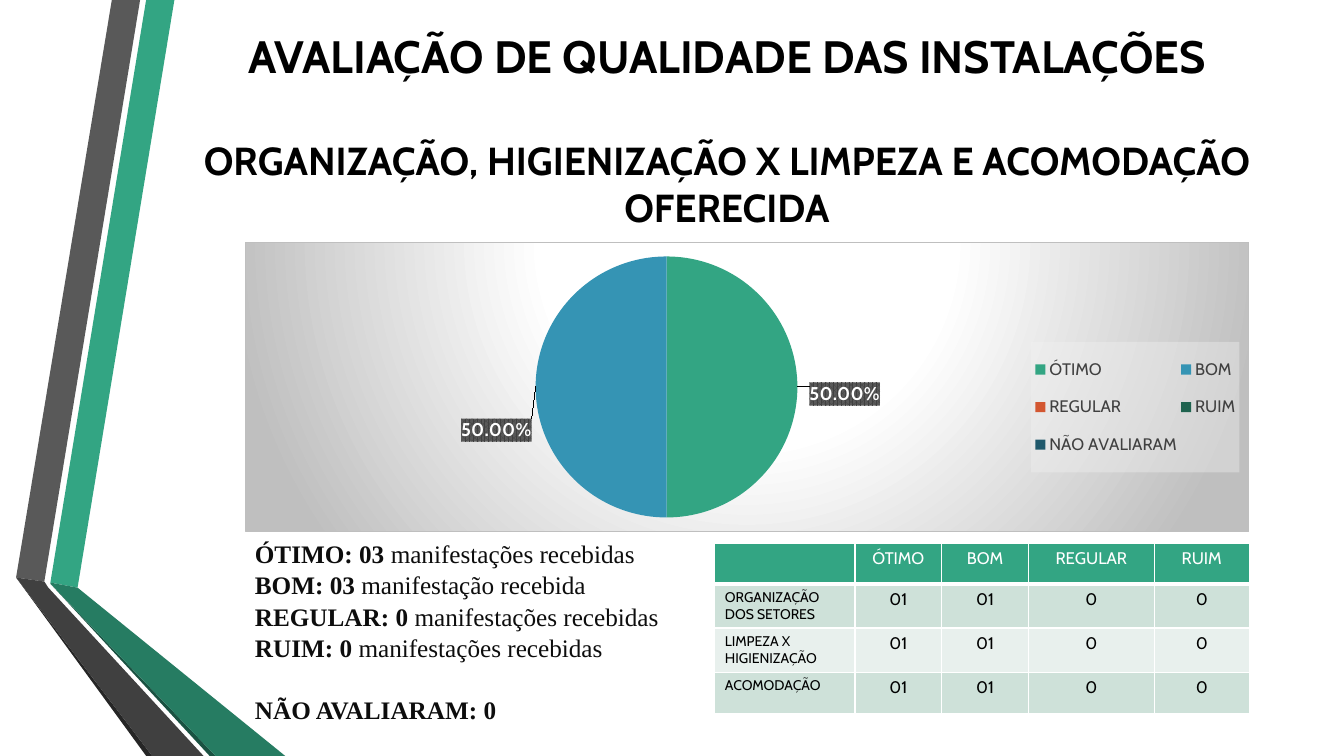
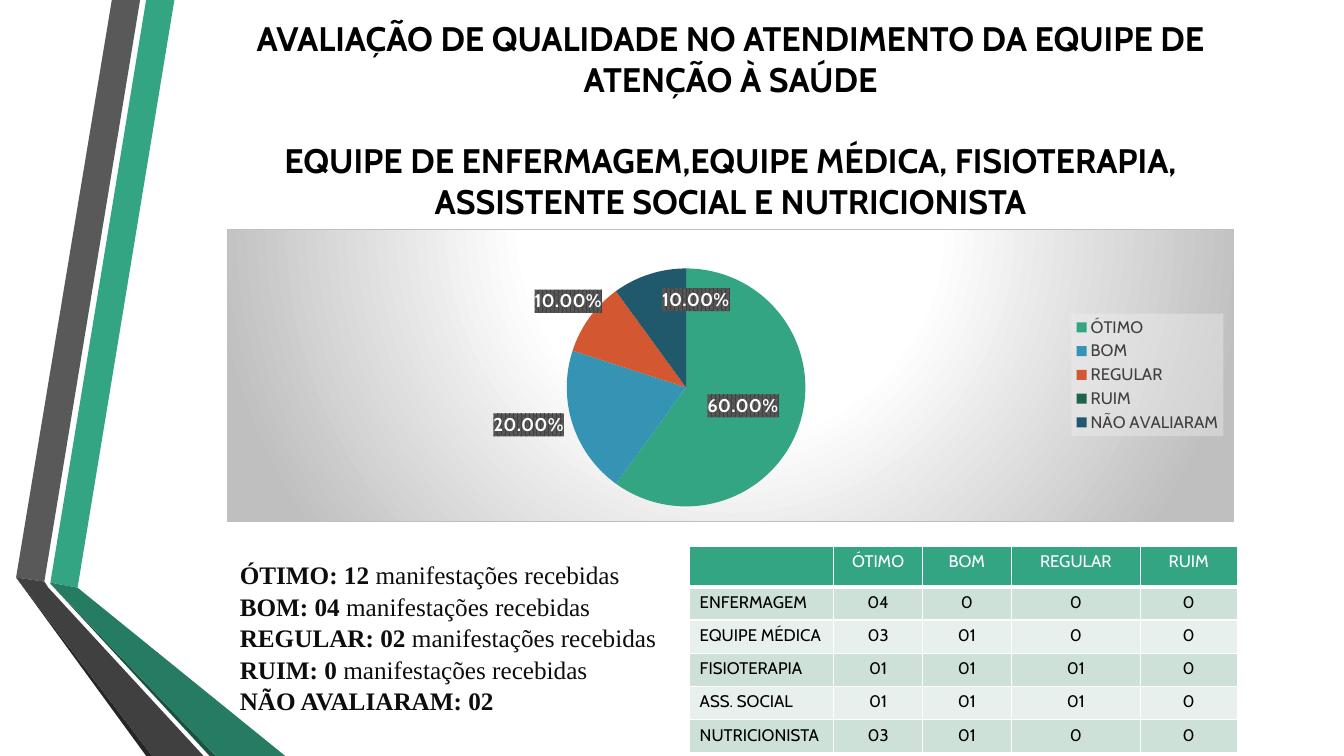
import copy
import pptx
import pptx.chart.data
import pptx.dml.color
import pptx.enum.chart
import pptx.enum.text
import pptx.oxml
import pptx.oxml.ns
import pptx.util

PX = 9144  # EMU in one px, 100 px to the inch
HEAD, BODY = "Cabin", "Times New Roman"
HEX = {
    "white": "FFFFFF", "black": "000000", "ink": "0D0D0D", "green": "33A583",
    "blue": "3594B4", "orange": "D35731", "pine": "1F634F", "navy": "20596C",
    "leaf": "267C62", "moss": "1A5242", "gray": "595959", "dark": "404040",
    "coal": "262626", "silver": "BFBFBF", "pale": "F2F2F2",
    "odd": "CEE1D9", "even": "E8F0ED",
}
RGB = {name: pptx.dml.color.RGBColor.from_string(code) for name, code in HEX.items()}
Pt = pptx.util.Pt
NS = pptx.oxml.ns.nsdecls("c", "a")
MID = pptx.enum.text.PP_ALIGN.CENTER

BANDS = [
    ("green", [(50, 578), (77, 583), (173, 0), (145, 0)]),
    ("gray", [(139, 0), (111, 0), (16, 573), (44, 577)]),
    ("coal", [(16, 573), (145, 750), (151, 750)]),
    ("moss", [(50, 579), (208, 750), (214, 750)]),
    ("leaf", [(50, 578), (50, 579), (214, 750), (283, 750), (77, 583)]),
    ("dark", [(202, 750), (48, 583), (44, 577), (16, 573), (151, 750)]),
]
RATES = ["ÓTIMO", "BOM", "REGULAR", "RUIM", "NÃO AVALIARAM"]
HUES = ["green", "blue", "orange", "pine", "navy"]
MANY = "manifestações recebidas"

SLIDES = [
    {
        "title": (173, 2, 1096, 252),
        "lines": [("AVALIAÇÃO DE QUALIDADE DAS INSTALAÇÕES", 32.4),
                  ("ORGANIZAÇÃO, HIGIENIZAÇÃO X LIMPEZA E ACOMODAÇÃO OFERECIDA", 27.9)],
        "gap": 39,
        "chart": (243, 240, 996, 288),
        "vals": [50, 50, 0, 0, 0],
        "pie": (288, 14, 260, 260),
        "legend": (780, 99, 207, 130),
        "shifts": {0: (112, 7), 1: (-104, 43)},
        "text": (243, 528, 438, 222),
        "notes": [("ÓTIMO: 03 ", MANY), ("BOM: 03 ", "manifestação recebida"),
                  ("REGULAR: 0 ", MANY), ("RUIM: 0 ", MANY), ("NÃO AVALIARAM: 0", "")],
        "last": 21.5,
        "table": (709, 539),
        "cols": [139, 86, 86, 125, 94],
        "rows": [31, 44, 44, 41],
        "size": 10,
        "cells": [("ORGANIZAÇÃO DOS SETORES", "01", "01", "0", "0"),
                  ("LIMPEZA X HIGIENIZAÇÃO", "01", "01", "0", "0"),
                  ("ACOMODAÇÃO", "01", "01", "0", "0")],
    },
    {
        "title": (179, 18, 1091, 201),
        "lines": [("AVALIAÇÃO DE QUALIDADE NO ATENDIMENTO DA EQUIPE DE ATENÇÃO À SAÚDE", 24.3),
                  ("EQUIPE DE ENFERMAGEM,EQUIPE MÉDICA, FISIOTERAPIA, "
                   "ASSISTENTE SOCIAL E NUTRICIONISTA", 24.3)],
        "gap": 29,
        "chart": (225, 227, 999, 291),
        "vals": [60, 20, 10, 0, 10],
        "pie": (337, 39, 237, 237),
        "legend": (838, 84, 151, 122),
        "shifts": {1: (-100, 19), 2: (-69, -51), 4: (28, -31)},
        "text": (228, 549, 456, 162),
        "notes": [("ÓTIMO: 12 ", MANY), ("BOM: 04 ", MANY), ("REGULAR: 02 ", MANY),
                  ("RUIM: 0 ", MANY), ("NÃO AVALIARAM: 02", "")],
        "last": 0,
        "table": (684, 542),
        "cols": [143, 88, 88, 128, 96],
        "rows": [34, 33, 33, 33, 33, 33],
        "size": 12,
        "cells": [("ENFERMAGEM", "04", "0", "0", "0"),
                  ("EQUIPE MÉDICA", "03", "01", "0", "0"),
                  ("FISIOTERAPIA", "01", "01", "01", "0"),
                  ("ASS. SOCIAL", "01", "01", "01", "0"),
                  ("NUTRICIONISTA", "03", "01", "0", "0")],
    },
]


def write(para, text, size, hue, face=HEAD, bold=False):
    run = para.add_run()
    run.text = text
    run.font.size, run.font.name, run.font.bold = Pt(size), face, bold
    run.font.color.rgb = RGB[hue]


def lay(box, wide, high, inner=False):
    """Manual chart layout; a box of two numbers is a shift."""
    tags = ""
    if inner:
        tags += '<c:layoutTarget val="inner"/>'
    if len(box) == 4:
        tags += '<c:xMode val="edge"/><c:yMode val="edge"/>'
    for tag, part, whole in zip("xywh", box, (wide, high, wide, high)):
        tags += f'<c:{tag} val="{part / whole:.4f}"/>'
    return pptx.oxml.parse_xml(
        f"<c:layout {NS}><c:manualLayout>{tags}</c:manualLayout></c:layout>")


deck = pptx.Presentation()
deck.slide_width, deck.slide_height = 1333 * PX, 750 * PX

for page in SLIDES:
    slide = deck.slides.add_slide(deck.slide_layouts[6])
    shapes = slide.shapes

    # Side bands
    for hue, dots in BANDS:
        pen = shapes.build_freeform(*dots[0], scale=PX)
        pen.add_line_segments(dots[1:], close=True)
        band = pen.convert_to_shape()
        band.shadow.inherit = False
        band.fill.solid()
        band.fill.fore_color.rgb = RGB[hue]
        band.line.fill.background()

    # Title
    frame = shapes.add_textbox(*[n * PX for n in page["title"]]).text_frame
    frame.word_wrap = True
    frame.vertical_anchor = pptx.enum.text.MSO_ANCHOR.MIDDLE
    for i, (text, size) in enumerate(page["lines"]):
        para = frame.add_paragraph() if i else frame.paragraphs[0]
        para.alignment = MID
        para.space_before = Pt(page["gap"] if i else 0)
        write(para, text, size, "black", bold=True)

    # Pie chart
    data = pptx.chart.data.CategoryChartData()
    data.categories = RATES
    data.add_series("Series 1", page["vals"])
    chart = shapes.add_chart(pptx.enum.chart.XL_CHART_TYPE.PIE,
                             *[n * PX for n in page["chart"]], data).chart
    wide, high = page["chart"][2:]
    chart.has_title = False
    chart.font.size, chart.font.name = Pt(10), HEAD
    chart.font.color.rgb = RGB["black"]
    plot = chart.plots[0]
    plot.vary_by_categories = True
    pie = plot.series[0]
    for i, hue in enumerate(HUES):
        fill = pie.points[i].format.fill
        fill.solid()
        fill.fore_color.rgb = RGB[hue]
    root = chart.element
    area = root.xpath(".//c:plotArea")[0]
    for old in area.xpath("c:layout"):
        area.remove(old)
    area.insert(0, lay(page["pie"], wide, high, inner=True))
    root.xpath("c:txPr")[0].addprevious(pptx.oxml.parse_xml(
        f'<c:spPr {NS}><a:gradFill><a:gsLst>'
        f'<a:gs pos="0"><a:srgbClr val="{HEX["white"]}"/></a:gs>'
        f'<a:gs pos="39000"><a:srgbClr val="{HEX["white"]}"/></a:gs>'
        f'<a:gs pos="100000"><a:srgbClr val="{HEX["silver"]}"/></a:gs></a:gsLst>'
        '<a:path path="circle"><a:fillToRect l="50000" t="-80000" r="50000" b="180000"/>'
        '</a:path></a:gradFill><a:ln w="9525"><a:solidFill>'
        f'<a:srgbClr val="{HEX["silver"]}"/></a:solidFill></a:ln></c:spPr>'))

    # Legend
    chart.has_legend = True
    key = chart.legend
    key.position = pptx.enum.chart.XL_LEGEND_POSITION.RIGHT
    key.include_in_layout = False
    key.font.size, key.font.name = Pt(12), HEAD
    key.font.color.rgb = RGB["dark"]
    root.xpath(".//c:legend/c:legendPos")[0].addnext(lay(page["legend"], wide, high))
    root.xpath(".//c:legend/c:txPr")[0].addprevious(pptx.oxml.parse_xml(
        f'<c:spPr {NS}><a:solidFill><a:srgbClr val="{HEX["pale"]}">'
        '<a:alpha val="39000"/></a:srgbClr></a:solidFill></c:spPr>'))

    # Percent labels
    tags = pie.data_labels
    tags.show_value, tags.show_percentage = False, True
    tags.number_format, tags.number_format_is_linked = "0.00%", False
    tags.position = pptx.enum.chart.XL_LABEL_POSITION.CENTER
    tags.font.size, tags.font.name, tags.font.bold = Pt(13.3), HEAD, True
    tags.font.color.rgb = RGB["white"]
    group = root.xpath(".//c:ser/c:dLbls")[0]
    group.xpath("c:txPr")[0].addprevious(pptx.oxml.parse_xml(
        f'<c:spPr {NS}><a:pattFill prst="pct75">'
        f'<a:fgClr><a:srgbClr val="{HEX["dark"]}"/></a:fgClr>'
        f'<a:bgClr><a:srgbClr val="{HEX["gray"]}"/></a:bgClr></a:pattFill></c:spPr>'))
    base = [tag for tag in group if not tag.tag.endswith("LeaderLines")]
    spot = 0
    for i, val in enumerate(page["vals"]):
        if val and i not in page["shifts"]:
            continue
        off = "" if val else '<c:delete val="1"/>'
        tag = pptx.oxml.parse_xml(f'<c:dLbl {NS}><c:idx val="{i}"/>{off}</c:dLbl>')
        if val:
            tag.append(lay(page["shifts"][i], wide, high))
            for part in base:
                tag.append(copy.deepcopy(part))
        group.insert(spot, tag)
        spot += 1

    # Counts
    frame = shapes.add_textbox(*[n * PX for n in page["text"]]).text_frame
    frame.word_wrap = True
    for i, (lead, rest) in enumerate(page["notes"]):
        para = frame.add_paragraph() if i else frame.paragraphs[0]
        para.line_spacing = 1.04
        write(para, lead, 18, "ink", BODY, True)
        if rest:
            write(para, rest, 18, "ink", BODY)
    para.space_before = Pt(page["last"])

    # Table
    cols, rows = page["cols"], page["rows"]
    box = (*page["table"], sum(cols), sum(rows))
    grid = shapes.add_table(len(rows), len(cols), *[n * PX for n in box])
    table = grid.table
    for col, size in zip(table.columns, cols):
        col.width = size * PX
    for row, size in zip(table.rows, rows):
        row.height = size * PX
    for r, line in enumerate([("", *RATES[:4])] + page["cells"]):
        for c, text in enumerate(line):
            cell = table.cell(r, c)
            cell.fill.solid()
            cell.fill.fore_color.rgb = RGB[("odd" if r % 2 else "even") if r else "green"]
            para = cell.text_frame.paragraphs[0]
            if c:
                para.alignment = MID
            if text:
                write(para, text, 12 if c else page["size"], "black" if r else "white")
    for i, cell in enumerate(grid.element.xpath(".//a:tcPr")):
        for j, side in enumerate("LRTB"):
            thick = 3 if side == "B" and i < len(cols) else 1
            cell.insert(j, pptx.oxml.parse_xml(
                f'<a:ln{side} {NS} w="{Pt(thick)}"><a:solidFill>'
                f'<a:srgbClr val="{HEX["white"]}"/></a:solidFill></a:ln{side}>'))

deck.save("out.pptx")
